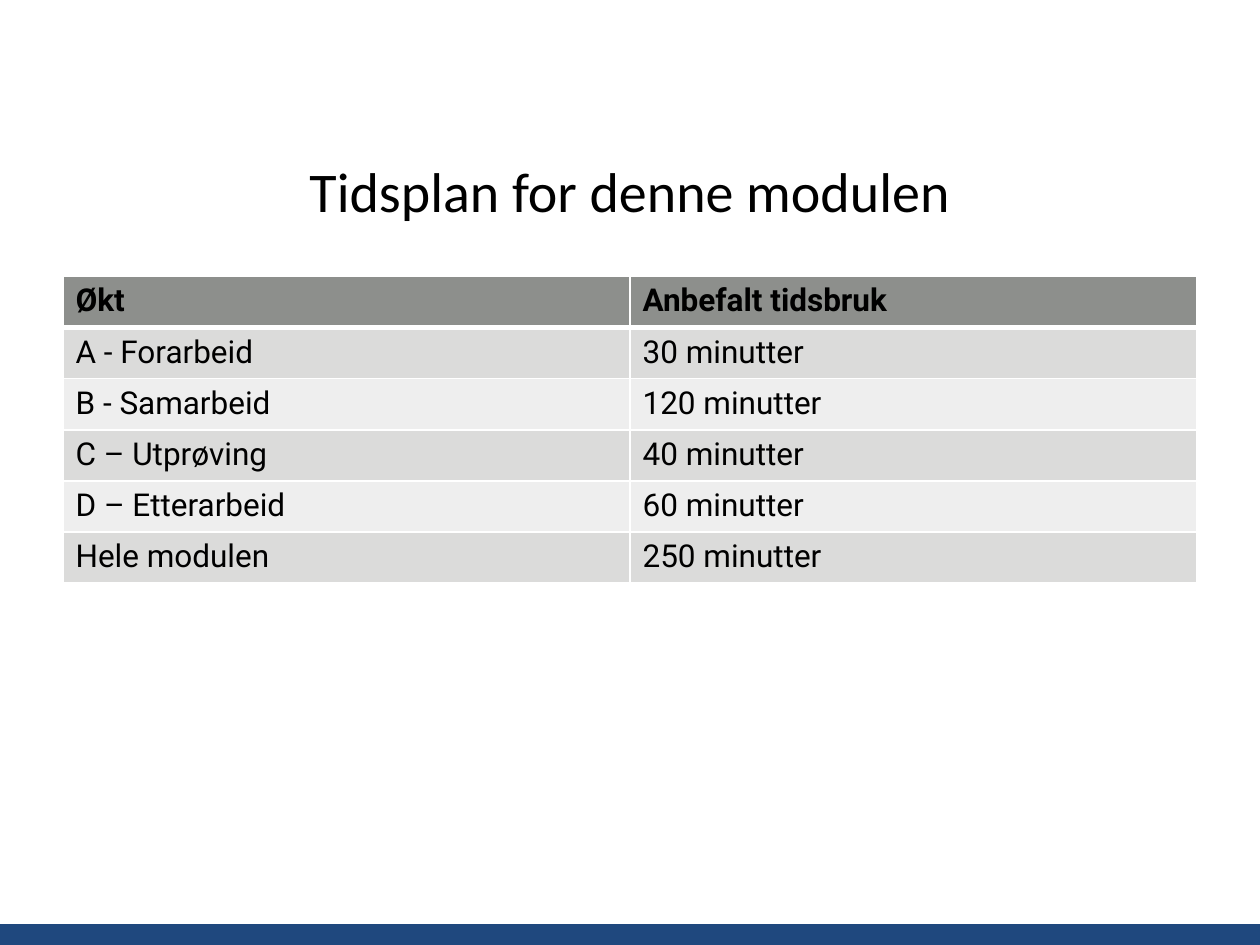
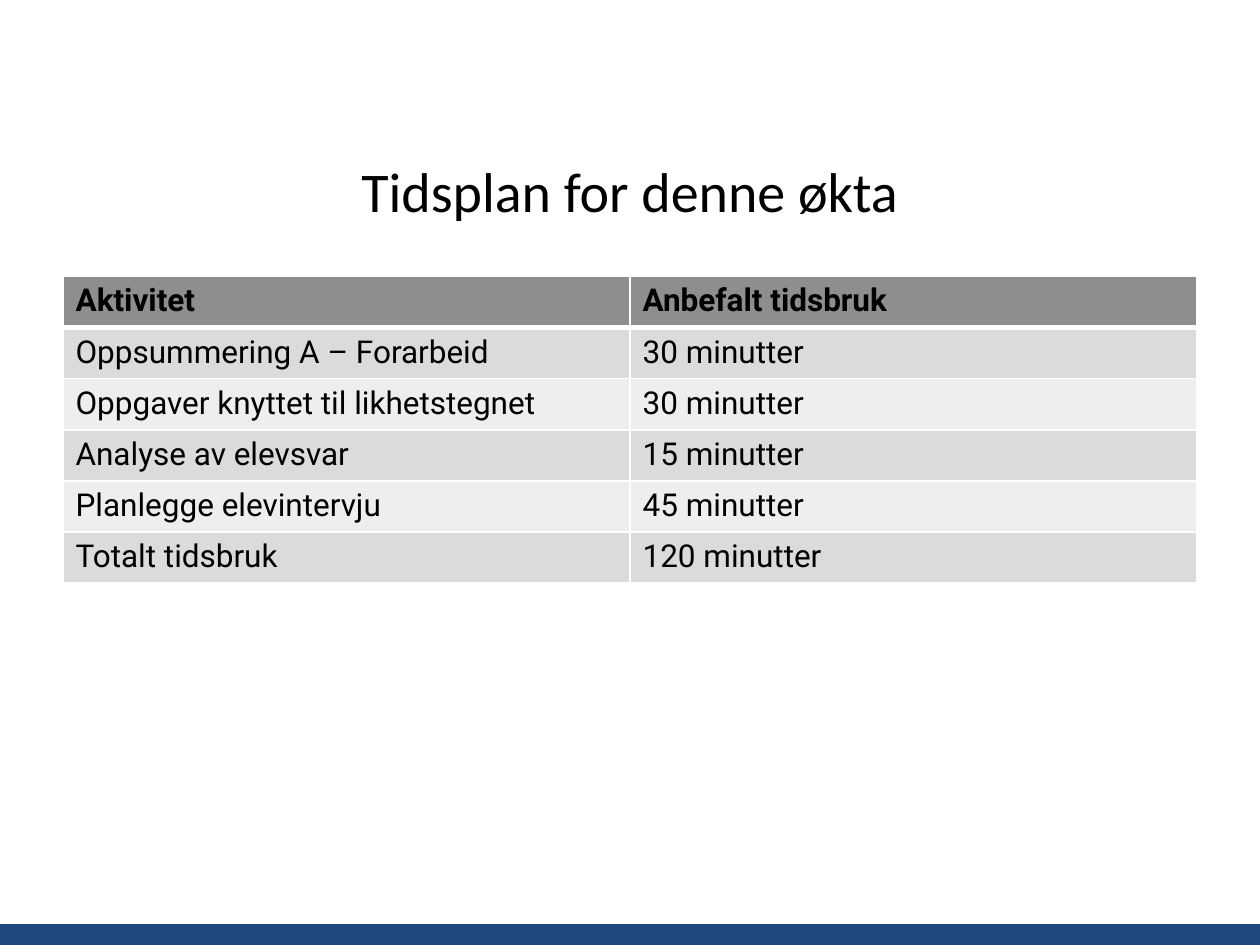
"""Build two timetable slides with a shared title, table and foot band."""
from lxml import etree
from pptx import Presentation
from pptx.dml.color import RGBColor
from pptx.enum import shapes, text
from pptx.oxml import ns
from pptx.util import Pt

BLACK = RGBColor(0x00, 0x00, 0x00)
WHITE = RGBColor(0xFF, 0xFF, 0xFF)
NAVY = RGBColor(0x1F, 0x48, 0x7E)
GREY = RGBColor(0x8D, 0x8F, 0x8C)
BANDS = [RGBColor(0xEE, 0xEE, 0xEE), RGBColor(0xDB, 0xDB, 0xDA)]

LEFT, WIDE, ROW = 36, 648, 29.2
TITLE = {"name": "Calibri", "size": Pt(32), "bold": False}
HEAD = {"name": "Roboto", "size": Pt(18), "bold": True}
BODY = {**HEAD, "bold": False}

PLANS = [
    ("Tidsplan for denne modulen", [
        ("Økt", "Anbefalt tidsbruk"),
        ("A - Forarbeid", "30 minutter"),
        ("B - Samarbeid", "120 minutter"),
        ("C – Utprøving", "40 minutter"),
        ("D – Etterarbeid", "60 minutter"),
        ("Hele modulen", "250 minutter"),
    ]),
    ("Tidsplan for denne økta", [
        ("Aktivitet", "Anbefalt tidsbruk"),
        ("Oppsummering A – Forarbeid", "30 minutter"),
        ("Oppgaver knyttet til likhetstegnet", "30 minutter"),
        ("Analyse av elevsvar", "15 minutter"),
        ("Planlegge elevintervju", "45 minutter"),
        ("Totalt tidsbruk", "120 minutter"),
    ]),
]


def style(par, words, form):
    """Write words into a paragraph with the given font values."""
    run = par.add_run()
    run.text = words
    for key, val in form.items():
        setattr(run.font, key, val)
    run.font.color.rgb = BLACK


def edge(cell, side, width):
    """Draw one white border of a cell."""
    props = cell._tc.get_or_add_tcPr()
    line = etree.SubElement(props, ns.qn(f"a:ln{side}"), w=str(Pt(width)))
    fill = etree.SubElement(line, ns.qn("a:solidFill"))
    etree.SubElement(fill, ns.qn("a:srgbClr"), val=str(WHITE))


deck = Presentation()
deck.slide_width, deck.slide_height = Pt(720), Pt(540)

for title, rows in PLANS:
    slide = deck.slides.add_slide(deck.slide_layouts[6])

    band = slide.shapes.add_shape(
        shapes.MSO_SHAPE.RECTANGLE, Pt(0), Pt(528), Pt(720), Pt(12))
    band.shadow.inherit = False
    band.fill.solid()
    band.fill.fore_color.rgb = NAVY
    band.line.fill.background()

    box = slide.shapes.add_textbox(Pt(LEFT), Pt(72), Pt(WIDE), Pt(73))
    frame = box.text_frame
    frame.word_wrap = True
    frame.vertical_anchor = text.MSO_ANCHOR.MIDDLE
    frame.paragraphs[0].alignment = text.PP_ALIGN.CENTER
    style(frame.paragraphs[0], title, TITLE)

    table = slide.shapes.add_table(
        len(rows), 2, Pt(LEFT), Pt(158), Pt(WIDE), Pt(ROW * len(rows))).table
    for i, row in enumerate(rows):
        table.rows[i].height = Pt(ROW)
        for j, words in enumerate(row):
            cell = table.cell(i, j)
            style(cell.text_frame.paragraphs[0], words, BODY if i else HEAD)
            sides = {"L": 1, "R": 1, "T": 3 if i == 1 else 1, "B": 1 if i else 3}
            for side, width in sides.items():
                edge(cell, side, width)
            cell.fill.solid()
            cell.fill.fore_color.rgb = BANDS[i % 2] if i else GREY

deck.save("out.pptx")
